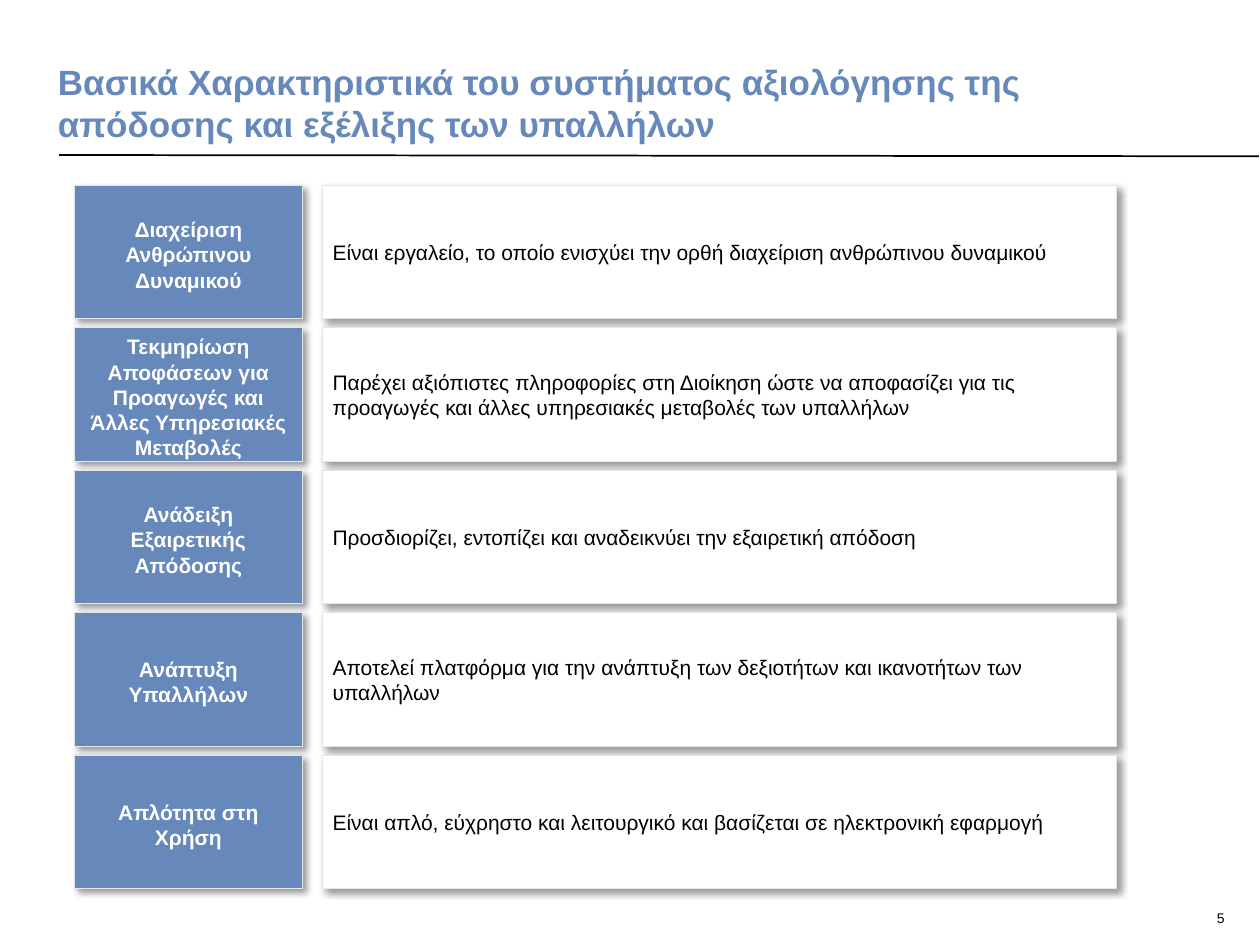
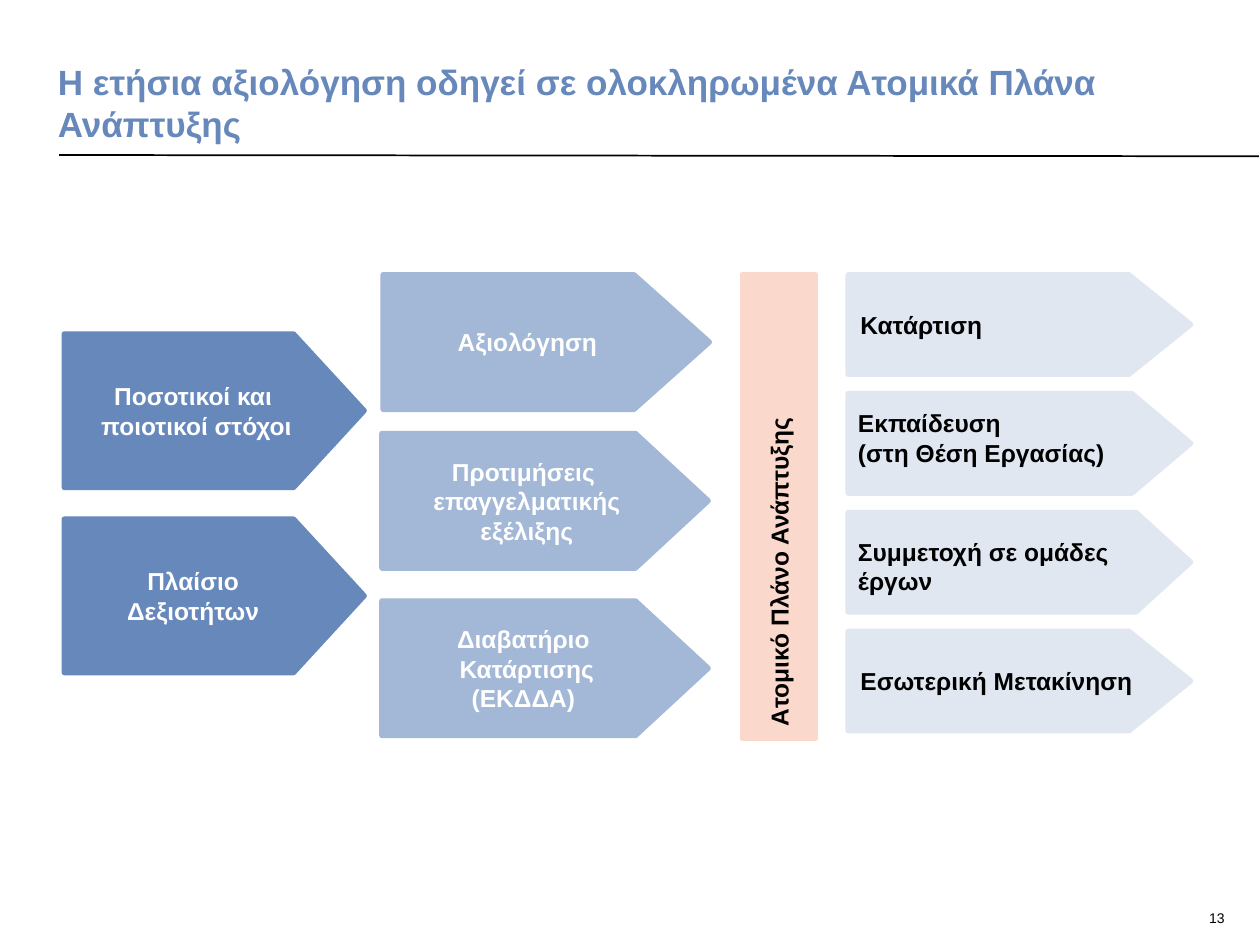
from lxml.etree import SubElement
from pptx import Presentation
from pptx.dml.color import RGBColor
from pptx.enum.shapes import MSO_CONNECTOR, MSO_SHAPE
from pptx.enum.text import MSO_ANCHOR, PP_ALIGN
from pptx.oxml import parse_xml
from pptx.oxml.ns import nsdecls, qn
from pptx.util import Pt

COLORS = {
    "blue": "6688BB",
    "mid": "A3B8D6",
    "pale": "E0E7F1",
    "peach": "FBD8CC",
    "edge": "E4E7E7",
    "white": "FFFFFF",
    "black": "000000",
}
FONT = "Arial"
SHADOW = (
    f'<a:effectLst {nsdecls("a")}>'
    '<a:outerShdw blurRad="50800" dist="38100" dir="2700000" algn="tl" rotWithShape="0">'
    f'<a:srgbClr val="{COLORS["black"]}"><a:alpha val="40000"/></a:srgbClr>'
    "</a:outerShdw></a:effectLst>"
)

FEATURES = [
    ("Διαχείριση Ανθρώπινου Δυναμικού",
     "Είναι εργαλείο, το οποίο ενισχύει την ορθή διαχείριση ανθρώπινου δυναμικού"),
    ("Τεκμηρίωση Αποφάσεων για Προαγωγές και Άλλες Υπηρεσιακές Μεταβολές",
     "Παρέχει αξιόπιστες πληροφορίες στη Διοίκηση ώστε να αποφασίζει για τις "
     "προαγωγές και άλλες υπηρεσιακές μεταβολές των υπαλλήλων"),
    ("Ανάδειξη Εξαιρετικής Απόδοσης",
     "Προσδιορίζει, εντοπίζει και αναδεικνύει την εξαιρετική απόδοση"),
    ("Ανάπτυξη Υπαλλήλων",
     "Αποτελεί πλατφόρμα για την ανάπτυξη των δεξιοτήτων και ικανοτήτων των υπαλλήλων"),
    ("Απλότητα στη Χρήση",
     "Είναι απλό, εύχρηστο και λειτουργικό και βασίζεται σε ηλεκτρονική εφαρμογή"),
]
INPUTS = [
    (190.8, ["Ποσοτικοί και ", "ποιοτικοί στόχοι"]),
    (296.6, ["Πλαίσιο ", "Δεξιοτήτων "]),
]
STEPS = [
    (218.9, 157, 0.56, ["Αξιολόγηση"]),
    (218.2, 247.7, 0.54, ["Προτιμήσεις ", "επαγγελματικής", "εξέλιξης"]),
    (218.2, 343.4, 0.54, ["Διαβατήριο ", "Κατάρτισης", "(ΕΚΔΔΑ) "]),
]
OUTCOMES = [
    (0.62, ["Κατάρτιση"]),
    (0.59, []),
    (0.55, []),
    (0.62, ["Εσωτερική Μετακίνηση"]),
]
OUTCOME_LABELS = [
    (230.4, ["Εκπαίδευση", "(στη Θέση Εργασίας)"]),
    (303.8, ["Συμμετοχή σε ομάδες", "έργων"]),
]


class Deck:
    def __init__(self):
        self.prs = Presentation()
        self.prs.slide_width, self.prs.slide_height = Pt(720), Pt(540)
        self.s = None

    def color(self, name):
        return RGBColor.from_string(COLORS[name])

    def slide(self, title, number):
        self.s = self.prs.slides.add_slide(self.prs.slide_layouts[6])
        self.rule(33.8, 88.6, 719.3, 89.3)
        self.label(668.9, 517, 31, 18, [number], 8, bold=False,
                   align=PP_ALIGN.RIGHT, insets=(0, 2.88, 0, 0))
        self.label(33.1, 14.4, 652.3, 68.4, [title], 20, "blue",
                   anchor=MSO_ANCHOR.BOTTOM, insets=(0, 0, 0, 0))

    def rule(self, x1, y1, x2, y2):
        line = self.s.shapes.add_connector(
            MSO_CONNECTOR.STRAIGHT, Pt(x1), Pt(y1), Pt(x2), Pt(y2))
        line.line.color.rgb = self.color("black")
        line.line.width = Pt(1)
        SubElement(line._element.spPr, qn("a:effectLst"))

    def set_text(self, sp, lines, size, color="black", bold=True, align=PP_ALIGN.LEFT,
                 anchor=MSO_ANCHOR.MIDDLE, insets=(7.2, 3.6, 7.2, 3.6), wrap=True):
        tf = sp.text_frame
        tf.word_wrap = wrap
        tf.vertical_anchor = anchor
        tf.margin_left, tf.margin_top, tf.margin_right, tf.margin_bottom = map(Pt, insets)
        for i, line in enumerate(lines):
            p = tf.add_paragraph() if i else tf.paragraphs[0]
            p.text = line
            p.alignment = align
            p.font.name = FONT
            p.font.size = Pt(size)
            p.font.bold = bold
            p.font.color.rgb = self.color(color)

    def label(self, x, y, w, h, lines, size, color="black", anchor=MSO_ANCHOR.TOP, **style):
        sp = self.s.shapes.add_textbox(Pt(x), Pt(y), Pt(w), Pt(h))
        self.set_text(sp, lines, size, color, anchor=anchor, **style)

    def shape(self, kind, x, y, w, h, fill, edge, weight):
        sp = self.s.shapes.add_shape(kind, Pt(x), Pt(y), Pt(w), Pt(h))
        sp.shadow.inherit = False
        sp.fill.solid()
        sp.fill.fore_color.rgb = self.color(fill)
        sp.line.color.rgb = self.color(edge)
        sp.line.width = Pt(weight)
        return sp

    def card(self, x, y, w, h, fill, text, color, top=5.76, **style):
        sp = self.shape(MSO_SHAPE.RECTANGLE, x, y, w, h, fill, "edge", 0.5)
        spPr = sp._element.spPr
        spPr.replace(spPr.find(qn("a:effectLst")), parse_xml(SHADOW))
        self.set_text(sp, [text], 12, color, insets=(5.76, top, 5.76, 5.76), **style)

    def arrow(self, x, y, w, h, tip, fill, lines, color="white", align=PP_ALIGN.CENTER):
        sp = self.shape(MSO_SHAPE.PENTAGON, x, y, w, h, fill, fill, 3)
        sp.adjustments[0] = tip
        self.set_text(sp, lines, 14, color, align=align, wrap=False)

    def upright_bar(self, x, y, w, h, fill, text):
        sp = self.shape(MSO_SHAPE.RECTANGLE, x, y, w, h, fill, fill, 3)
        self.set_text(sp, [text], 14)
        sp.text_frame._txBody.bodyPr.set("vert", "vert270")


def features_slide(deck):
    deck.slide("Βασικά Χαρακτηριστικά του συστήματος αξιολόγησης της απόδοσης "
               "και εξέλιξης των υπαλλήλων", "5")
    for i, (name, detail) in enumerate(FEATURES):
        y = 105.8 + i * 81.4
        deck.card(42.5, y, 130.3, 76.4, "blue", name, "white", top=8.64,
                  align=PP_ALIGN.CENTER)
        deck.card(184.3, y, 453.6, 76.4, "white", detail, "black", bold=False)


def plan_slide(deck):
    deck.slide("Η ετήσια αξιολόγηση οδηγεί σε ολοκληρωμένα Ατομικά Πλάνα Ανάπτυξης", "13")
    for y, lines in INPUTS:
        deck.arrow(36.7, y, 171.4, 87.8, 0.46, "blue", lines)
    for x, y, tip, lines in STEPS:
        deck.arrow(x, y, 186.5, 77, tip, "mid", lines)
    deck.upright_bar(424.1, 157, 41.8, 265, "peach", "Ατομικό Πλάνο Ανάπτυξης")
    for i, (tip, lines) in enumerate(OUTCOMES):
        deck.arrow(484.6, 157 + i * 67.9, 195.8, 56.9, tip, "pale", lines,
                   "black", PP_ALIGN.LEFT)
    for y, lines in OUTCOME_LABELS:
        deck.label(487.4, y, 195.8, 39.6, lines, 14, insets=(2.88,) * 4)


def main():
    deck = Deck()
    features_slide(deck)
    plan_slide(deck)
    deck.prs.save("out.pptx")


if __name__ == "__main__":
    main()
